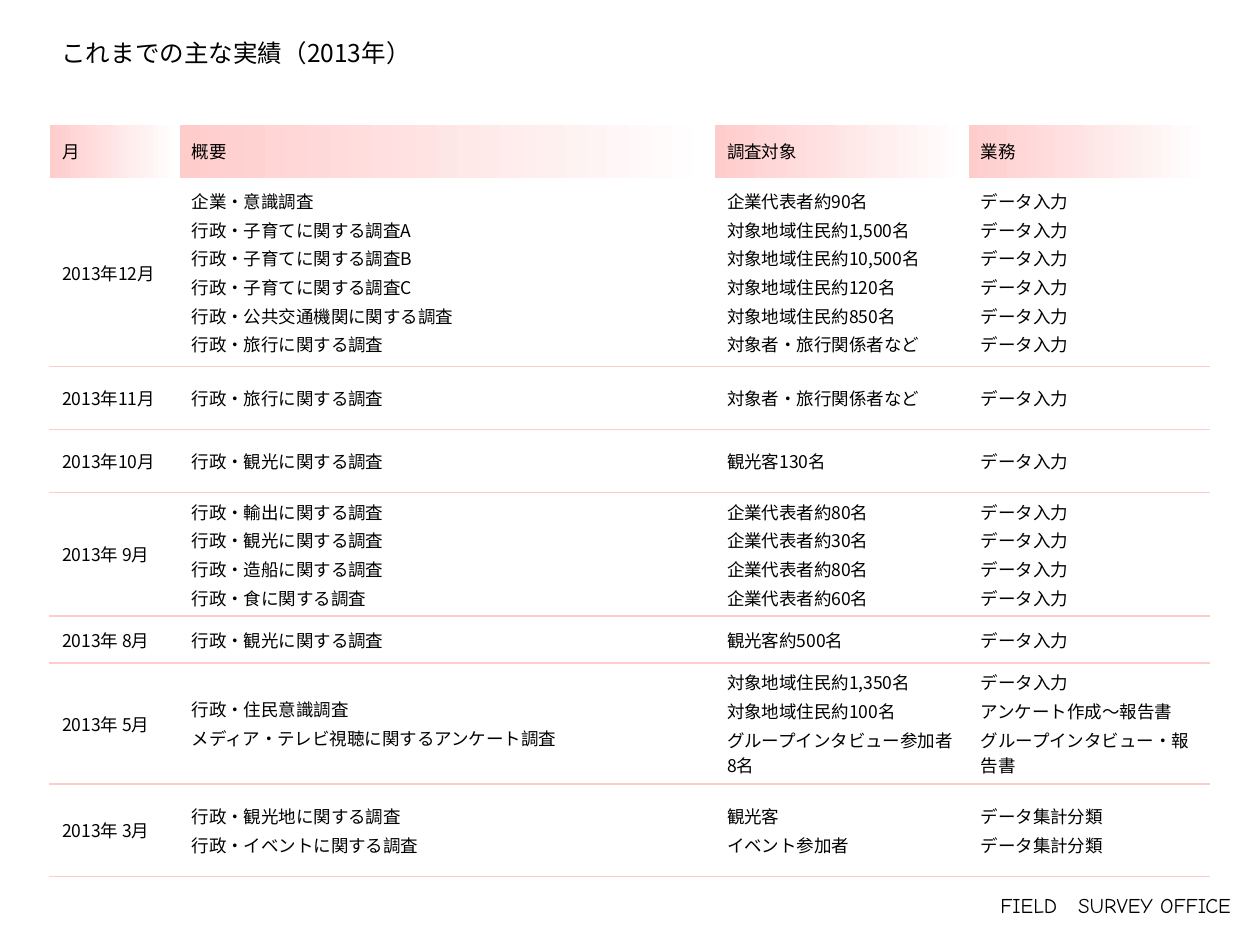
import pptx
import pptx.util
import pptx.dml.color
import pptx.enum.text
import lxml.etree
from pptx.oxml.ns import qn

Pt = pptx.util.Pt
RGBColor = pptx.dml.color.RGBColor
MIDDLE = pptx.enum.text.MSO_ANCHOR.MIDDLE

BLACK = RGBColor(0x00, 0x00, 0x00)
WHITE = RGBColor(0xFF, 0xFF, 0xFF)
PINK = RGBColor(0xFF, 0xCC, 0xCC)
JAPANESE_FONT = "Noto Sans CJK JP"
FOOTER_FONT = "Comic Neue"


def add_span(para, text, size, font_name):
    span = para.add_run()
    span.text = text
    span.font.size = Pt(size)
    span.font.bold = False
    span.font.color.rgb = BLACK
    span.font.name = font_name
    east_asian = lxml.etree.SubElement(span.font._element, qn("a:ea"))
    east_asian.set("typeface", font_name)


def add_border(cell, side, color):
    properties = cell._tc.get_or_add_tcPr()
    line = lxml.etree.SubElement(properties, qn("a:" + side), w=str(Pt(1)))
    fill = lxml.etree.SubElement(line, qn("a:solidFill"))
    lxml.etree.SubElement(fill, qn("a:srgbClr"), val=str(color))


deck = pptx.Presentation()
deck.slide_width = Pt(720)
deck.slide_height = Pt(540)
page = deck.slides.add_slide(deck.slide_layouts[6])

# Title
title = page.shapes.add_textbox(Pt(28), Pt(16), Pt(663), Pt(28)).text_frame
title.word_wrap = True
title.vertical_anchor = MIDDLE
add_span(title.paragraphs[0], "これまでの主な実績（2013年）", 14, JAPANESE_FONT)

# Table contents: each cell is a list of lines
ENTRY = "データ入力"
rows = [
    (31, [["月"], ["概要"], ["調査対象"], ["業務"]]),
    (107.5, [
        ["2013年12月"],
        ["企業・意識調査", "行政・子育てに関する調査A", "行政・子育てに関する調査B",
         "行政・子育てに関する調査C", "行政・公共交通機関に関する調査",
         "行政・旅行に関する調査"],
        ["企業代表者約90名", "対象地域住民約1,500名", "対象地域住民約10,500名",
         "対象地域住民約120名", "対象地域住民約850名", "対象者・旅行関係者など"],
        [ENTRY] * 6]),
    (36, [["2013年11月"], ["行政・旅行に関する調査"],
          ["対象者・旅行関係者など"], [ENTRY]]),
    (36, [["2013年10月"], ["行政・観光に関する調査"], ["観光客130名"], [ENTRY]]),
    (70.5, [
        ["2013年 9月"],
        ["行政・輸出に関する調査", "行政・観光に関する調査",
         "行政・造船に関する調査", "行政・食に関する調査"],
        ["企業代表者約80名", "企業代表者約30名", "企業代表者約80名", "企業代表者約60名"],
        [ENTRY] * 4]),
    (27, [["2013年 8月"], ["行政・観光に関する調査"], ["観光客約500名"], [ENTRY]]),
    (69, [
        ["2013年 5月"],
        ["行政・住民意識調査", "メディア・テレビ視聴に関するアンケート調査"],
        ["対象地域住民約1,350名", "対象地域住民約100名", "グループインタビュー参加者8名"],
        [ENTRY, "アンケート作成～報告書", "グループインタビュー・報告書"]]),
    (53, [
        ["2013年 3月"],
        ["行政・観光地に関する調査", "行政・イベントに関する調査"],
        ["観光客", "イベント参加者"],
        ["データ集計分類"] * 2]),
]
column_widths = [74, 306, 145, 138]

# Table
table = page.shapes.add_table(
    len(rows), len(column_widths), Pt(28.3), Pt(71),
    Pt(sum(column_widths)), Pt(sum(height for height, cells in rows))).table
table.first_row = False
table.horz_banding = False
for column, width in zip(table.columns, column_widths):
    column.width = Pt(width)

for row_index, (height, cells) in enumerate(rows):
    table.rows[row_index].height = Pt(height)
    for column_index, lines in enumerate(cells):
        cell = table.cell(row_index, column_index)
        cell.vertical_anchor = MIDDLE
        cell.margin_left = cell.margin_right = Pt(7.2)
        cell.margin_top = cell.margin_bottom = Pt(3.6)

        # White verticals, pink rules below the body rows
        add_border(cell, "lnL", WHITE)
        add_border(cell, "lnR", WHITE)
        add_border(cell, "lnT", PINK if row_index > 1 else WHITE)
        add_border(cell, "lnB", PINK if row_index > 0 else WHITE)

        # Header cells fade from pink to white
        if row_index == 0:
            cell.fill.gradient()
            cell.fill.gradient_angle = 0
            for stop, color in zip(cell.fill.gradient_stops, (PINK, WHITE)):
                stop.color.rgb = color
        else:
            cell.fill.background()

        for line_index, text in enumerate(lines):
            if line_index == 0:
                para = cell.text_frame.paragraphs[0]
            else:
                para = cell.text_frame.add_paragraph()
                para.space_before = Pt(1)
            para.space_after = Pt(1)
            add_span(para, text, 10, JAPANESE_FONT)

# Footer
footer = page.shapes.add_textbox(Pt(461.5), Pt(508.5), Pt(249), Pt(19.5)).text_frame
footer.word_wrap = True
para = footer.paragraphs[0]
para.alignment = pptx.enum.text.PP_ALIGN.RIGHT
para.line_spacing = 0.85
add_span(para, "FIELD　SURVEY OFFICE", 12, FOOTER_FONT)

deck.save("out.pptx")
